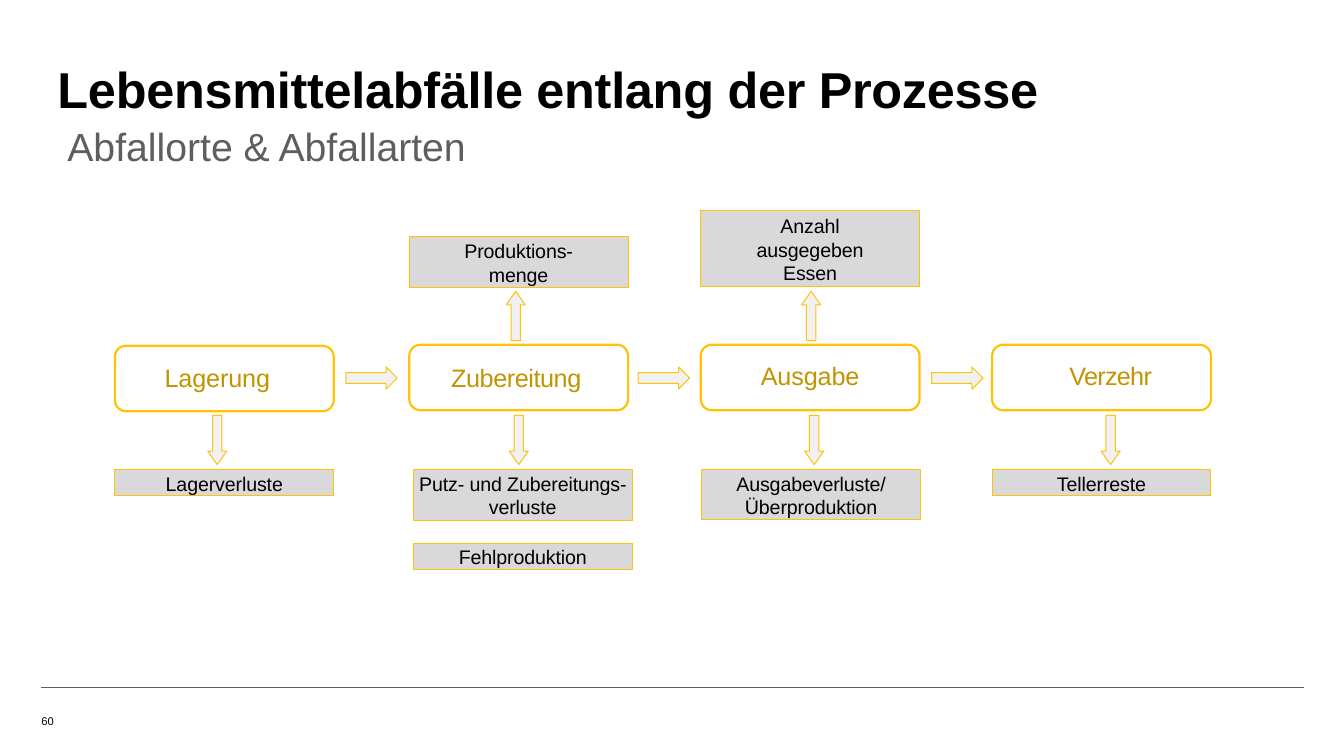
from dataclasses import dataclass
from pptx import Presentation
from pptx.dml.color import RGBColor as Rgb
from pptx.enum.shapes import MSO_CONNECTOR as Link, MSO_SHAPE as Kind
from pptx.enum.text import MSO_ANCHOR as Anchor, PP_ALIGN as Align
from pptx.oxml.ns import qn
from pptx.shapes.autoshape import Shape
from pptx.slide import Slide
from pptx.util import Inches, Pt


@dataclass(frozen=True)
class Theme:
    font: str = "Arial"
    black: str = "000000"
    gray: str = "5E5E5E"
    gold: str = "FEC306"
    ochre: str = "C29401"
    box: str = "D9D9D9"
    arrow: str = "F1F1F1"
    title: int = 36
    sub: int = 28
    stage: int = 18
    note: int = 14
    page: int = 8
    thick: float = 1.56
    thin: float = 0.72


@dataclass(frozen=True)
class Area:
    x: float
    y: float
    w: float
    h: float


@dataclass(frozen=True)
class Style:
    size: int
    color: str
    bold: bool = False
    track: float = 0
    align: Align = Align.LEFT
    before: float = 0
    lead: float = 1


@dataclass(frozen=True)
class Stage:
    x: float
    y: float
    name: str
    text: Area
    track: float
    down: float


@dataclass(frozen=True)
class Note:
    area: Area
    paras: tuple[str, ...]
    anchor: Anchor = Anchor.TOP


THEME = Theme()
WIDE, HIGH = 2.17, 0.65
LOW = 4.66

STAGES = [
    Stage(1.14, 3.43, "Lagerung", Area(1.58, 3.57, 1.15, 0.32), -0.1, 2.06),
    Stage(4.06, 3.42, "Zubereitung", Area(4.38, 3.57, 1.48, 0.32), -0.3, 5.05),
    Stage(6.95, 3.42, "Ausgabe", Area(7.5, 3.55, 1.07, 0.32), -0.1, 7.98),
    Stage(9.84, 3.42, "Verzehr", Area(10.54, 3.55, 0.95, 0.32), -0.5, 10.92),
]
NOTES = [
    Note(Area(4.06, 2.35, WIDE, 0.5), ("Produktions-\vmenge",)),
    Note(Area(6.95, 2.09, WIDE, 0.75), ("Anzahl", "ausgegeben\vEssen"), Anchor.MIDDLE),
    Note(Area(1.14, LOW, WIDE, 0.26), ("Lagerverluste",)),
    Note(Area(4.1, LOW, WIDE, 0.5), ("Putz- und Zubereitungs-verluste",)),
    Note(Area(4.1, 5.39, WIDE, 0.26), ("Fehlproduktion",)),
    Note(Area(6.96, LOW, WIDE, 0.49), ("Ausgabeverluste/\vÜberproduktion",)),
    Note(Area(9.84, LOW, WIDE, 0.26), ("Tellerreste",)),
]
NEXT = [3.43, 6.33, 9.24]
UP = [5.02, 7.95]


def write(shape: Shape, paras: tuple[str, ...], style: Style,
          inset: tuple[float, float] = (0, 0), anchor: Anchor = Anchor.TOP) -> None:
    frame = shape.text_frame
    frame.word_wrap = True
    frame.vertical_anchor = anchor
    side, top = inset
    frame.margin_left = frame.margin_right = Inches(side)
    frame.margin_top, frame.margin_bottom = Inches(top), Inches(0)
    for i, text in enumerate(paras):
        para = frame.add_paragraph() if i else frame.paragraphs[0]
        para.alignment = style.align
        para.line_spacing = style.lead
        para.space_before = Pt(0 if i else style.before)
        for j, line in enumerate(text.split("\v")):
            if j:
                para.add_line_break()
            run = para.add_run()
            run.text = line
            font = run.font
            font.name, font.size, font.bold = THEME.font, Pt(style.size), style.bold
            font.color.rgb = Rgb.from_string(style.color)
            if style.track:
                run._r.get_or_add_rPr().set("spc", str(round(style.track * 100)))


def label(slide: Slide, area: Area, text: str, style: Style,
          inset: tuple[float, float] = (0, 0), anchor: Anchor = Anchor.TOP) -> None:
    box = slide.shapes.add_textbox(*map(Inches, (area.x, area.y, area.w, area.h)))
    write(box, (text,), style, inset, anchor)


def block(slide: Slide, kind: Kind, area: Area, fill: str | None, width: float,
          adjust: tuple[float, ...] = ()) -> Shape:
    shape = slide.shapes.add_shape(kind, *map(Inches, (area.x, area.y, area.w, area.h)))
    shape.shadow.inherit = False
    if fill:
        shape.fill.solid()
        shape.fill.fore_color.rgb = Rgb.from_string(fill)
    else:
        shape.fill.background()
    shape.line.color.rgb = Rgb.from_string(THEME.gold)
    shape.line.width = Pt(width)
    for i, part in enumerate(adjust):
        shape.adjustments[i] = part
    return shape


def arrow(slide: Slide, kind: Kind, area: Area, head: float) -> None:
    block(slide, kind, area, THEME.arrow, THEME.thin, (0.49, head))


def main() -> None:
    deck = Presentation()
    deck.slide_width, deck.slide_height = Inches(13.33), Inches(7.5)
    slide = deck.slides.add_slide(deck.slide_layouts[6])

    # Footer rule and page number
    rule = slide.shapes.add_connector(
        Link.STRAIGHT, *map(Inches, (0.41, 6.82, 12.93, 6.82)))
    rule.line.color.rgb = Rgb.from_string(THEME.gray)
    rule.line.width = Pt(0.5)
    props = rule._element.spPr
    props.append(props.makeelement(qn("a:effectLst"), {}))
    label(slide, Area(0.41, 6.9, 1.57, 0.32), "60",
          Style(THEME.page, THEME.black), anchor=Anchor.BOTTOM)

    # Headings
    label(slide, Area(0.57, 0.58, 9.81, 0.62), "Lebensmittelabfälle entlang der Prozesse",
          Style(THEME.title, THEME.black, bold=True, track=-0.2))
    label(slide, Area(0.57, 1.12, 9.65, 0.55), "Abfallorte & Abfallarten",
          Style(THEME.sub, THEME.gray, lead=1.1), (0.1, 0.05))

    # Process stages, each with its arrow to the losses
    for stage in STAGES:
        block(slide, Kind.ROUNDED_RECTANGLE, Area(stage.x, stage.y, WIDE, HIGH),
              None, THEME.thick, (0.17,))
        label(slide, stage.text, stage.name,
              Style(THEME.stage, THEME.ochre, track=stage.track,
                    align=Align.CENTER, before=1.2), (0, 0.02))
        arrow(slide, Kind.DOWN_ARROW, Area(stage.down, 4.12, 0.19, 0.49), 0.71)

    # Arrows between stages and up to the quantities
    for x in NEXT:
        arrow(slide, Kind.RIGHT_ARROW, Area(x, 3.64, 0.51, 0.22), 0.5)
    for x in UP:
        arrow(slide, Kind.UP_ARROW, Area(x, 2.89, 0.19, 0.49), 0.71)

    # Quantities and kinds of waste
    style = Style(THEME.note, THEME.black, track=-0.1, align=Align.CENTER, before=1.8)
    for note in NOTES:
        shape = block(slide, Kind.RECTANGLE, note.area, THEME.box, THEME.thin)
        write(shape, note.paras, style, (0, 0.02), note.anchor)

    deck.save("out.pptx")


if __name__ == "__main__":
    main()
